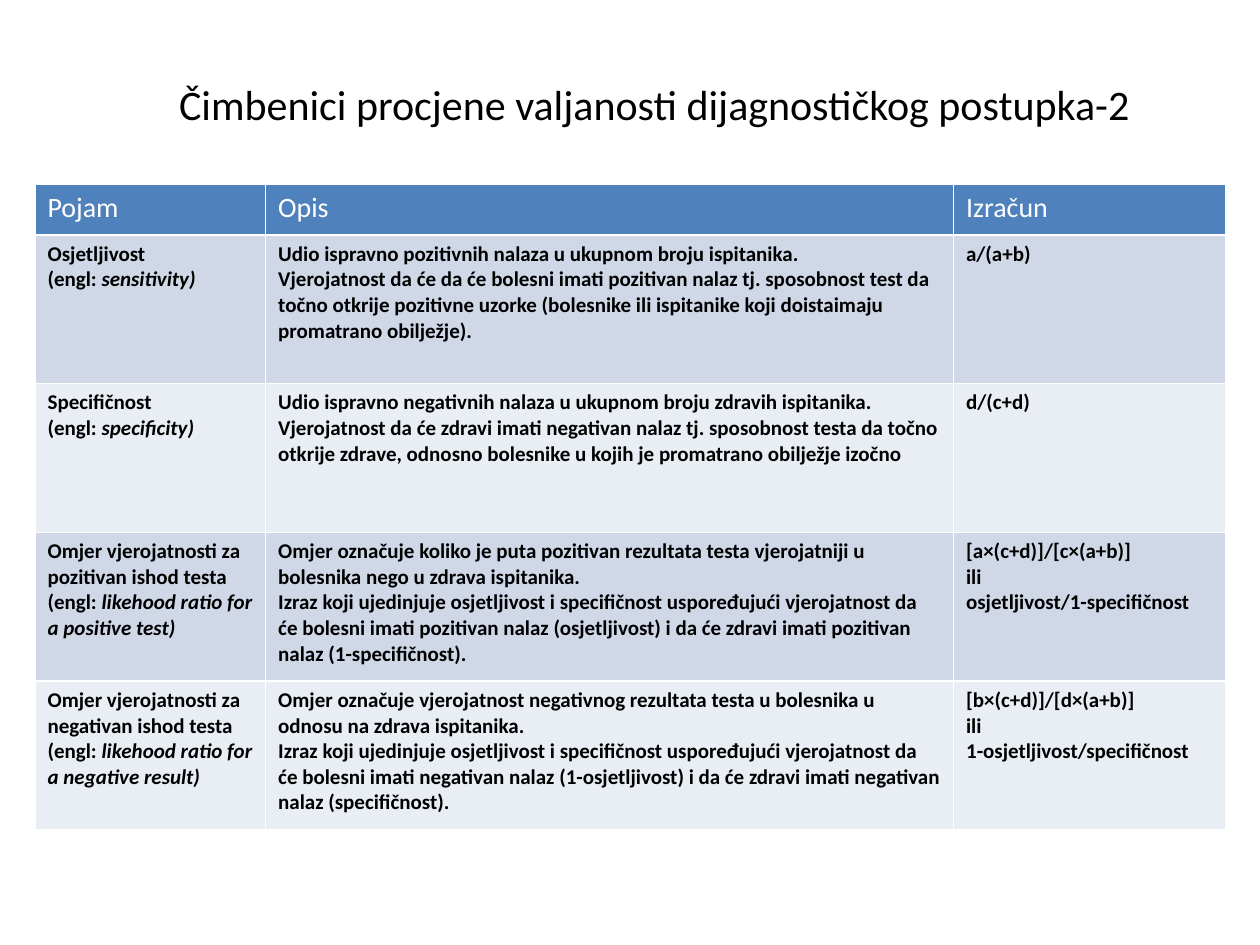
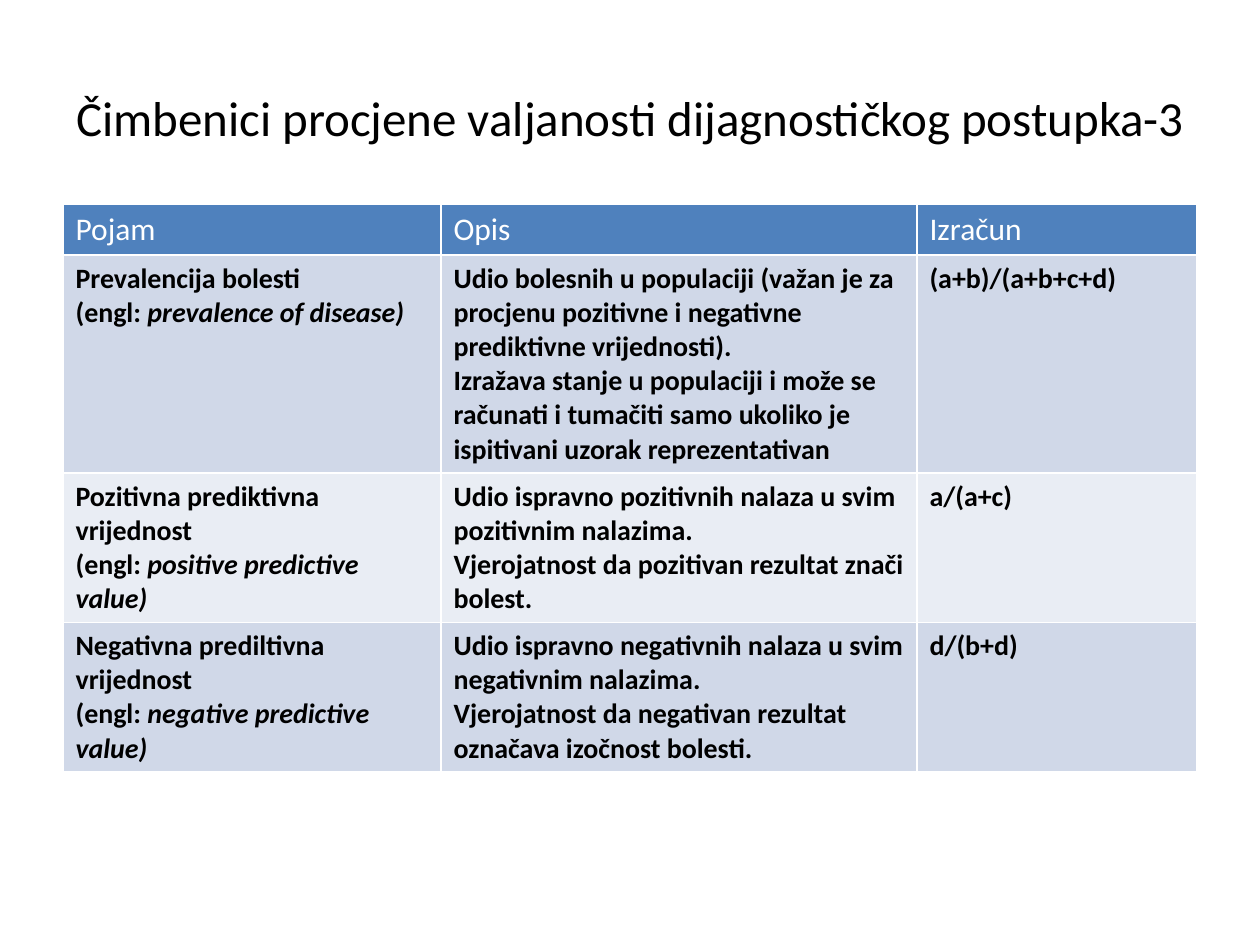
import dataclasses

import pptx
import pptx.dml.color
import pptx.enum.text
import pptx.util

Pt = pptx.util.Pt


@dataclasses.dataclass(frozen=True)
class Sizes:
    title: int
    header: int
    body: int


@dataclasses.dataclass(frozen=True)
class Theme:
    font: str = "Calibri"
    ink: str = "000000"
    header_ink: str = "FFFFFF"
    header_fill: str = "4F81BD"
    band_fills: tuple = ("D0D8E8", "E9EDF4")
    dense: Sizes = Sizes(title=24, header=16, body=12)
    roomy: Sizes = Sizes(title=28, header=18, body=16)


def color(value):
    return pptx.dml.color.RGBColor.from_string(value)


def add_span(para, text, *, font, size, ink, bold=False, italic=False):
    span = para.add_run()
    span.text = text
    span.font.name = font
    span.font.size = Pt(size)
    span.font.color.rgb = color(ink)
    span.font.bold = bold
    span.font.italic = italic


class PageBuilder:
    headings = ("Pojam", "Opis", "Izračun")

    def __init__(self, deck, theme, sizes):
        self.theme = theme
        self.sizes = sizes
        self.page = deck.slides.add_slide(deck.slide_layouts[6])

    def title(self, text, left, top, width, height):
        box = self.page.shapes.add_textbox(Pt(left), Pt(top), Pt(width), Pt(height))
        frame = box.text_frame
        frame.word_wrap = True
        frame.vertical_anchor = pptx.enum.text.MSO_ANCHOR.MIDDLE
        para = frame.paragraphs[0]
        para.alignment = pptx.enum.text.PP_ALIGN.CENTER
        add_span(para, text, font=self.theme.font, size=self.sizes.title, ink=self.theme.ink)

    def cell(self, cell, lines, *, fill, **style):
        cell.fill.solid()
        cell.fill.fore_color.rgb = color(fill)
        frame = cell.text_frame
        for index, line in enumerate(lines):
            para = frame.add_paragraph() if index else frame.paragraphs[0]
            plain, slanted = line if isinstance(line, tuple) else (line, "")
            add_span(para, plain, font=self.theme.font, **style)
            if slanted:
                add_span(para, slanted, font=self.theme.font, italic=True, **style)

    def table(self, terms, left, top, widths, heights):
        theme, sizes = self.theme, self.sizes
        table = self.page.shapes.add_table(
            len(heights), len(widths), Pt(left), Pt(top), Pt(sum(widths)), Pt(sum(heights))
        ).table
        for column, width in zip(table.columns, widths):
            column.width = Pt(width)
        for row, height in zip(table.rows, heights):
            row.height = Pt(height)
        for column, heading in enumerate(self.headings):
            self.cell(table.cell(0, column), [heading], fill=theme.header_fill,
                      size=sizes.header, ink=theme.header_ink)
        for row, (name, english, description, formula) in enumerate(terms, start=1):
            fill = theme.band_fills[(row - 1) % 2]
            term = [name, ("(engl: ", english + ")")]
            for column, lines in enumerate((term, description, formula)):
                self.cell(table.cell(row, column), lines, fill=fill,
                          size=sizes.body, ink=theme.ink, bold=True)


ACCURACY_TERMS = [
    ("Osjetljivost", "sensitivity",
     ["Udio ispravno pozitivnih nalaza u ukupnom broju ispitanika.",
      "Vjerojatnost da će da će bolesni imati pozitivan nalaz tj. sposobnost test da točno "
      "otkrije pozitivne uzorke (bolesnike ili ispitanike koji doistaimaju promatrano obilježje)."],
     ["a/(a+b)"]),
    ("Specifičnost", "specificity",
     ["Udio ispravno negativnih nalaza u ukupnom broju zdravih ispitanika.",
      "Vjerojatnost da će zdravi imati negativan nalaz tj. sposobnost testa da točno otkrije "
      "zdrave, odnosno bolesnike u kojih je promatrano obilježje izočno"],
     ["d/(c+d)"]),
    ("Omjer vjerojatnosti za pozitivan ishod testa", "likehood ratio for a positive test",
     ["Omjer označuje koliko je puta pozitivan rezultata testa vjerojatniji u bolesnika nego "
      "u zdrava ispitanika.",
      "Izraz koji ujedinjuje osjetljivost i specifičnost uspoređujući vjerojatnost da će "
      "bolesni imati pozitivan nalaz (osjetljivost) i da će zdravi imati pozitivan nalaz "
      "(1-specifičnost)."],
     ["[a×(c+d)]/[c×(a+b)]", "ili", "osjetljivost/1-specifičnost"]),
    ("Omjer vjerojatnosti za negativan ishod testa", "likehood ratio for a negative result",
     ["Omjer označuje vjerojatnost negativnog rezultata testa u bolesnika u odnosu na "
      "zdrava ispitanika.",
      "Izraz koji ujedinjuje osjetljivost i specifičnost uspoređujući vjerojatnost da će "
      "bolesni imati negativan nalaz (1-osjetljivost) i da će zdravi imati negativan nalaz "
      "(specifičnost)."],
     ["[b×(c+d)]/[d×(a+b)]", "ili", "1-osjetljivost/specifičnost"]),
]

PREDICTION_TERMS = [
    ("Prevalencija bolesti", "prevalence of disease",
     ["Udio bolesnih u populaciji (važan je za procjenu pozitivne i negativne prediktivne "
      "vrijednosti).",
      "Izražava stanje u populaciji i može se računati i tumačiti samo ukoliko je ispitivani "
      "uzorak reprezentativan"],
     ["(a+b)/(a+b+c+d)"]),
    ("Pozitivna prediktivna vrijednost", "positive predictive value",
     ["Udio ispravno pozitivnih nalaza u svim pozitivnim nalazima.",
      "Vjerojatnost da pozitivan rezultat znači bolest."],
     ["a/(a+c)"]),
    ("Negativna prediltivna vrijednost", "negative predictive value",
     ["Udio ispravno negativnih nalaza u svim negativnim nalazima.",
      "Vjerojatnost da negativan rezultat označava izočnost bolesti."],
     ["d/(b+d)"]),
]

TITLE = "Čimbenici procjene valjanosti dijagnostičkog postupka-"


def main():
    deck = pptx.Presentation()
    deck.slide_width, deck.slide_height = Pt(720), Pt(540)
    theme = Theme()

    accuracy = PageBuilder(deck, theme, theme.dense)
    accuracy.table(ACCURACY_TERMS, 20, 105.5, [131.8, 393.1, 155.5], [28.8] + [85] * 4)
    accuracy.title(TITLE + "2", 48, 21, 652, 77)

    prediction = PageBuilder(deck, theme, theme.roomy)
    prediction.table(PREDICTION_TERMS, 36, 116.9, [216, 272, 160], [28.5, 124.6, 85.4, 85.4])
    prediction.title(TITLE + "3", 36, 21.6, 648, 90)

    deck.save("out.pptx")


if __name__ == "__main__":
    main()
